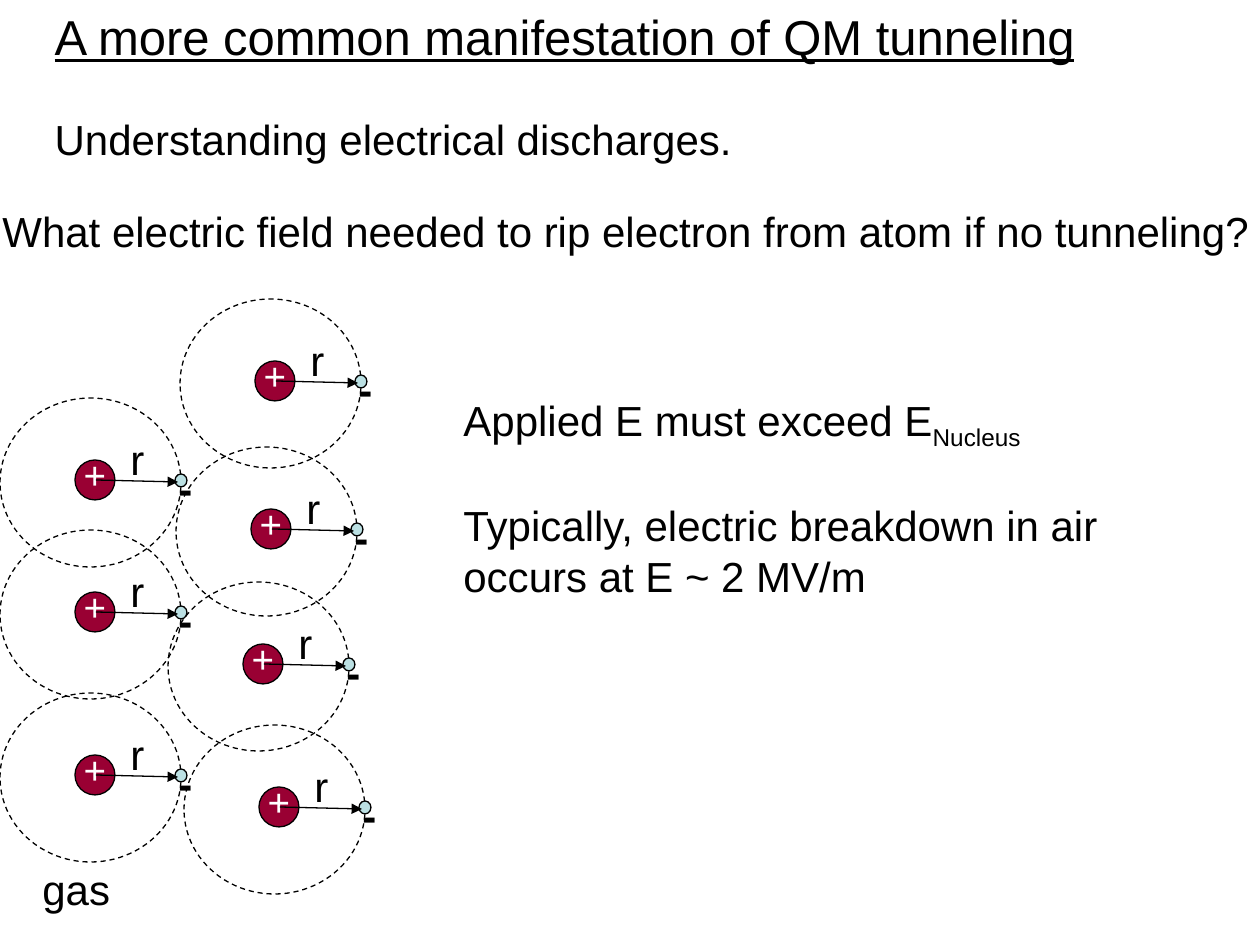
import pptx
import pptx.util
import pptx.dml.color
import pptx.enum.dml
import pptx.enum.shapes
import pptx.enum.text
import lxml.etree
from pptx.oxml.ns import qn

INK = {"text": "000000", "core": "990033", "dot": "BBE0E3", "plus": "FFFFFF"}
ATOMS = [(176, 447), (0, 530), (0, 398), (180, 299), (168, 582), (184, 725), (0, 693)]
GAP = 27.6


def px(num):
    return pptx.util.Emu(round(num * 914400 / 126))


def hue(name):
    return pptx.dml.color.RGBColor.from_string(INK[name])


class Deck:
    font = "Arial"
    size = 24
    line = 0.75

    def __init__(self, wide, high):
        self.file = pptx.Presentation()
        self.file.slide_width = px(wide)
        self.file.slide_height = px(high)
        self.slide = self.file.slides.add_slide(self.file.slide_layouts[5])

    def run(self, para, text, size=None, ink="text", bold=False, under=False, base=0):
        run = para.add_run()
        run.text = text
        font = run.font
        font.name = self.font
        font.size = pptx.util.Pt(size or self.size)
        font.color.rgb = hue(ink)
        font.bold = bold
        font.underline = under
        if base:
            run._r.get_or_add_rPr().set("baseline", str(base * 1000))

    def fill(self, shape, paras, wrap):
        frame = shape.text_frame
        frame.word_wrap = wrap
        frame.auto_size = pptx.enum.text.MSO_AUTO_SIZE.SHAPE_TO_FIT_TEXT
        frame.vertical_anchor = pptx.enum.text.MSO_ANCHOR.TOP
        for num, runs in enumerate(paras):
            para = frame.add_paragraph() if num else frame.paragraphs[0]
            para.alignment = pptx.enum.text.PP_ALIGN.LEFT
            if num:
                para.space_before = pptx.util.Pt(GAP)
            for text, style in runs:
                self.run(para, text, **style)

    def title(self, box, paras):
        shape = self.slide.shapes.title
        shape.left, shape.top, shape.width, shape.height = map(px, box)
        self.fill(shape, paras, False)

    def text(self, box, paras, wrap=True, home=None):
        home = home or self.slide
        self.fill(home.shapes.add_textbox(*map(px, box)), paras, wrap)

    def disc(self, home, box, ink=None, dash=False):
        kind = pptx.enum.shapes.MSO_SHAPE.OVAL
        shape = home.shapes.add_shape(kind, *map(px, box))
        shape.shadow.inherit = False
        if ink:
            shape.fill.solid()
            shape.fill.fore_color.rgb = hue(ink)
        else:
            shape.fill.background()
        self.edge(shape.line)
        if dash:
            shape.line.dash_style = pptx.enum.dml.MSO_LINE.DASH
        return shape

    def edge(self, line):
        line.color.rgb = hue("text")
        line.width = pptx.util.Pt(self.line)

    def arrow(self, home, ends):
        kind = pptx.enum.shapes.MSO_CONNECTOR.STRAIGHT
        link = home.shapes.add_connector(kind, *map(px, ends))
        self.edge(link.line)
        props = link._element.spPr
        lxml.etree.SubElement(props.find(qn("a:ln")), qn("a:tailEnd"), type="triangle")
        lxml.etree.SubElement(props, qn("a:effectLst"))

    def core(self, home, box):
        frame = self.disc(home, box, "core").text_frame
        frame.word_wrap = False
        frame.vertical_anchor = pptx.enum.text.MSO_ANCHOR.MIDDLE
        para = frame.paragraphs[0]
        para.alignment = pptx.enum.text.PP_ALIGN.CENTER
        para.line_spacing = 0.7
        self.run(para, "+", 22, "plus")

    def atom(self, left, top):
        home = self.slide.shapes.add_group_shape()
        self.core(home, (left + 75, top + 62, 40, 40))
        self.disc(home, (left, top, 181, 169), dash=True)
        self.disc(home, (left + 175, top + 76, 12, 13), "dot")
        self.text((left + 166, top + 58, 26, 63), [[("-", {"bold": True})]], home=home)
        self.arrow(home, (left + 96, top + 82, left + 178, top + 84))
        self.text((left + 118, top + 29, 39, 63), [[("r", {})]], False, home)


def main():
    deck = Deck(1260, 945)
    deck.title((42, 0, 1057, 174), [
        [("A more common manifestation of QM tunneling", {"size": 28, "under": True})],
        [("Understanding electrical discharges.", {})],
    ])
    deck.text((-10, 199, 1302, 63), [
        [("What electric field needed to rip electron from atom if no tunneling?", {})],
    ])
    for spot in ATOMS:
        deck.atom(*spot)
    deck.text((30, 857, 93, 63), [[("gas", {})]], False)
    deck.text((451, 388, 725, 217), [
        [("Applied E must exceed E", {}), ("Nucleus", {"base": -25})],
        [("Typically, electric breakdown in air occurs at E ~ 2 MV/m", {})],
    ])
    deck.file.save("out.pptx")


if __name__ == "__main__":
    main()
